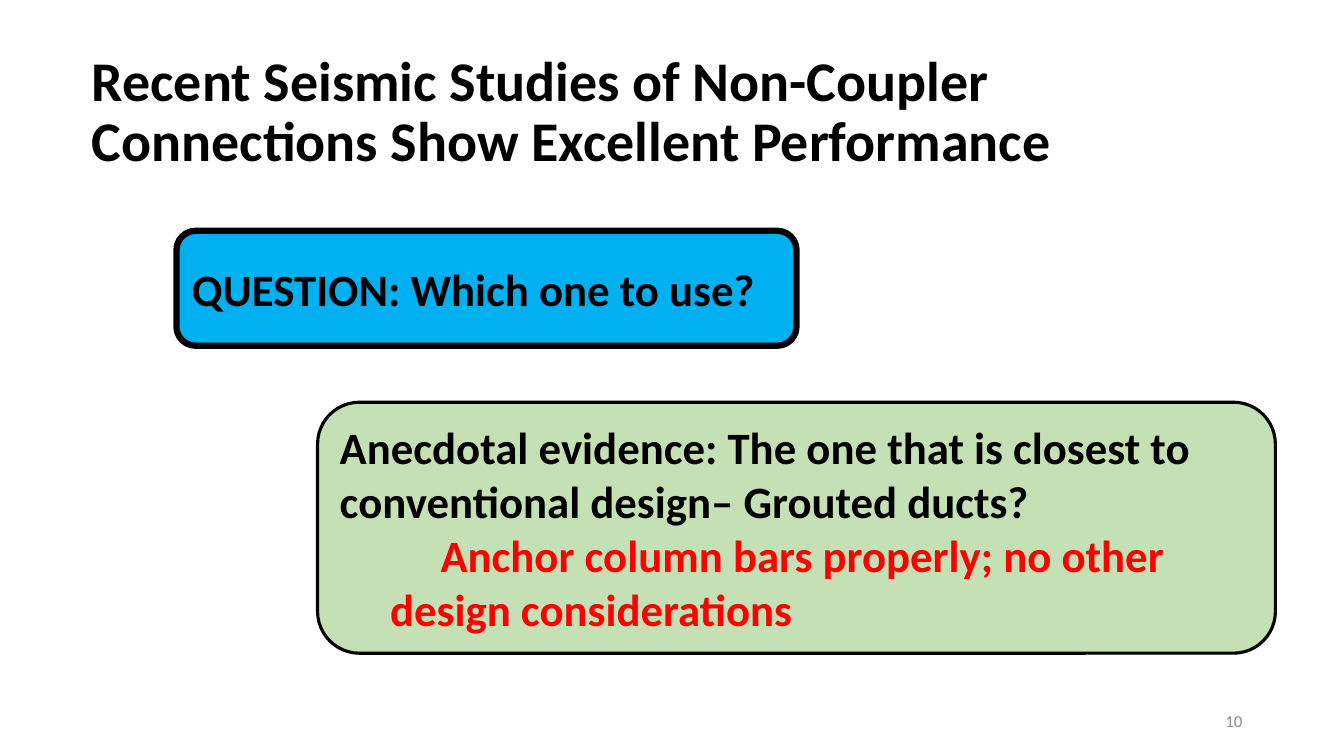
from pptx import Presentation
from pptx.dml.color import RGBColor
from pptx.enum.shapes import MSO_SHAPE
from pptx.enum.text import MSO_ANCHOR, MSO_AUTO_SIZE, PP_ALIGN
from pptx.util import Inches, Pt

COLORS = {"ink": "000000", "question": "00B0F0", "answer": "C5E0B4",
          "advice": "FF0000", "number": "8C8C8C"}
FONT = "Calibri"

TITLE = {"text": "Recent Seismic Studies of Non-Coupler Connections Show Excellent Performance",
         "at": (0.81, 0.4, 11.5, 1.45)}
CARDS = [
    {"at": (1.75, 2.29, 6.15, 1.14), "fill": "question", "line": 4.5,
     "paragraphs": [("QUESTION: Which one to use?", "ink", 0)]},
    {"at": (3.15, 3.99, 9.5, 2.49), "fill": "answer", "line": 2.25,
     "paragraphs": [
         ("Anecdotal evidence: The one that is closest to conventional design– Grouted ducts?", "ink", 0),
         ("Anchor column bars properly; no other design considerations", "advice", 0.5)]},
]
PAGE = {"text": "10", "at": (9.42, 6.95, 3, 0.4)}


def color(name):
    return RGBColor.from_string(COLORS[name])


def box(at):
    return [Inches(length) for length in at]


def prepare(frame):
    frame.word_wrap = True
    frame.auto_size = MSO_AUTO_SIZE.NONE
    frame.vertical_anchor = MSO_ANCHOR.MIDDLE


def write(paragraph, text, size, ink, bold=True, align=PP_ALIGN.LEFT):
    paragraph.alignment = align
    run = paragraph.add_run()
    run.text = text
    run.font.name = FONT
    run.font.size = Pt(size)
    run.font.bold = bold
    run.font.color.rgb = color(ink)


def indent(paragraph, inches):
    properties = paragraph._p.get_or_add_pPr()
    for side in ("marL", "indent"):
        properties.set(side, str(Inches(inches)))


def add_card(slide, card):
    shape = slide.shapes.add_shape(MSO_SHAPE.ROUNDED_RECTANGLE, *box(card["at"]))
    shape.shadow.inherit = False
    shape.fill.solid()
    shape.fill.fore_color.rgb = color(card["fill"])
    shape.line.color.rgb = color("ink")
    shape.line.width = Pt(card["line"])
    frame = shape.text_frame
    prepare(frame)
    for position, (text, ink, inset) in enumerate(card["paragraphs"]):
        paragraph = frame.add_paragraph() if position else frame.paragraphs[0]
        write(paragraph, text, 32, ink)
        indent(paragraph, inset)


def main():
    deck = Presentation()
    deck.slide_width, deck.slide_height = Inches(13.33), Inches(7.5)
    slide = deck.slides.add_slide(deck.slide_layouts[5])

    title = slide.shapes.title
    title.left, title.top, title.width, title.height = box(TITLE["at"])
    prepare(title.text_frame)
    heading = title.text_frame.paragraphs[0]
    heading.line_spacing = 0.9
    write(heading, TITLE["text"], 40, "ink")

    for card in CARDS:
        add_card(slide, card)

    page = slide.shapes.add_textbox(*box(PAGE["at"])).text_frame
    prepare(page)
    write(page.paragraphs[0], PAGE["text"], 12, "number", False, PP_ALIGN.RIGHT)

    deck.save("out.pptx")


if __name__ == "__main__":
    main()
